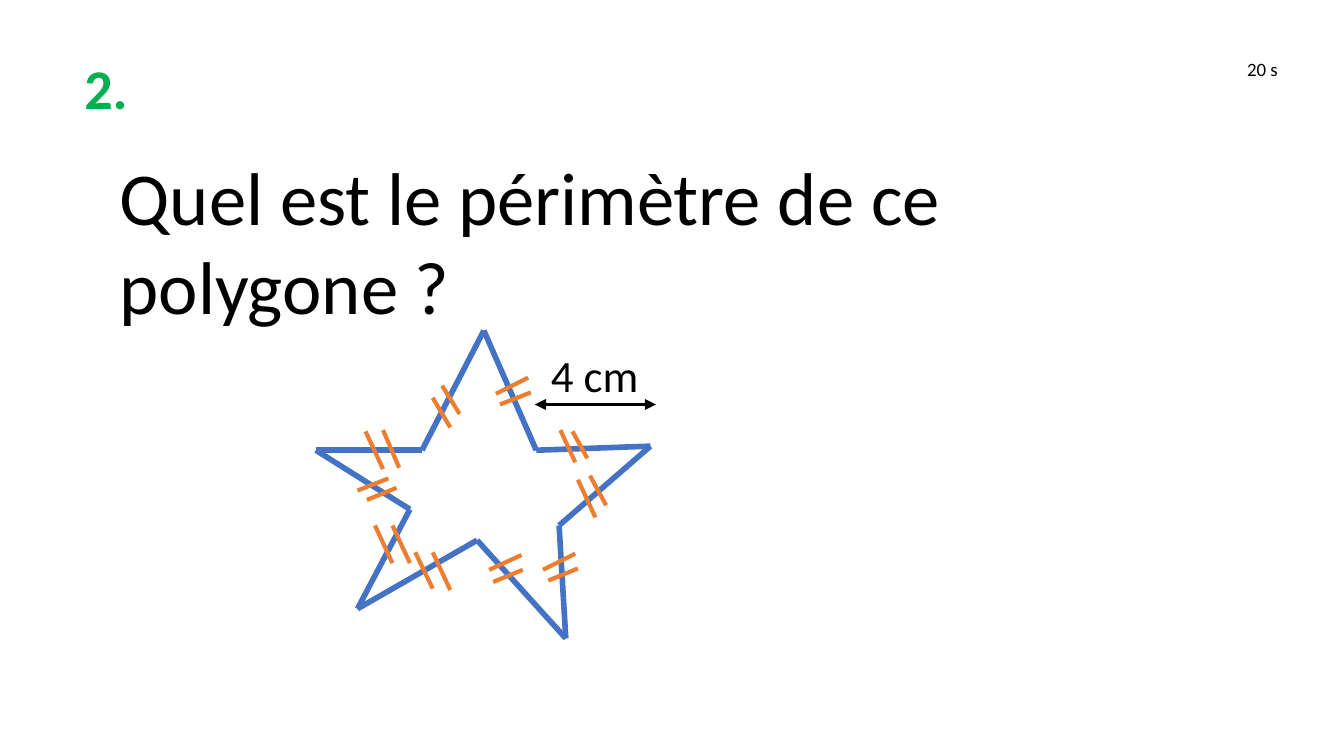
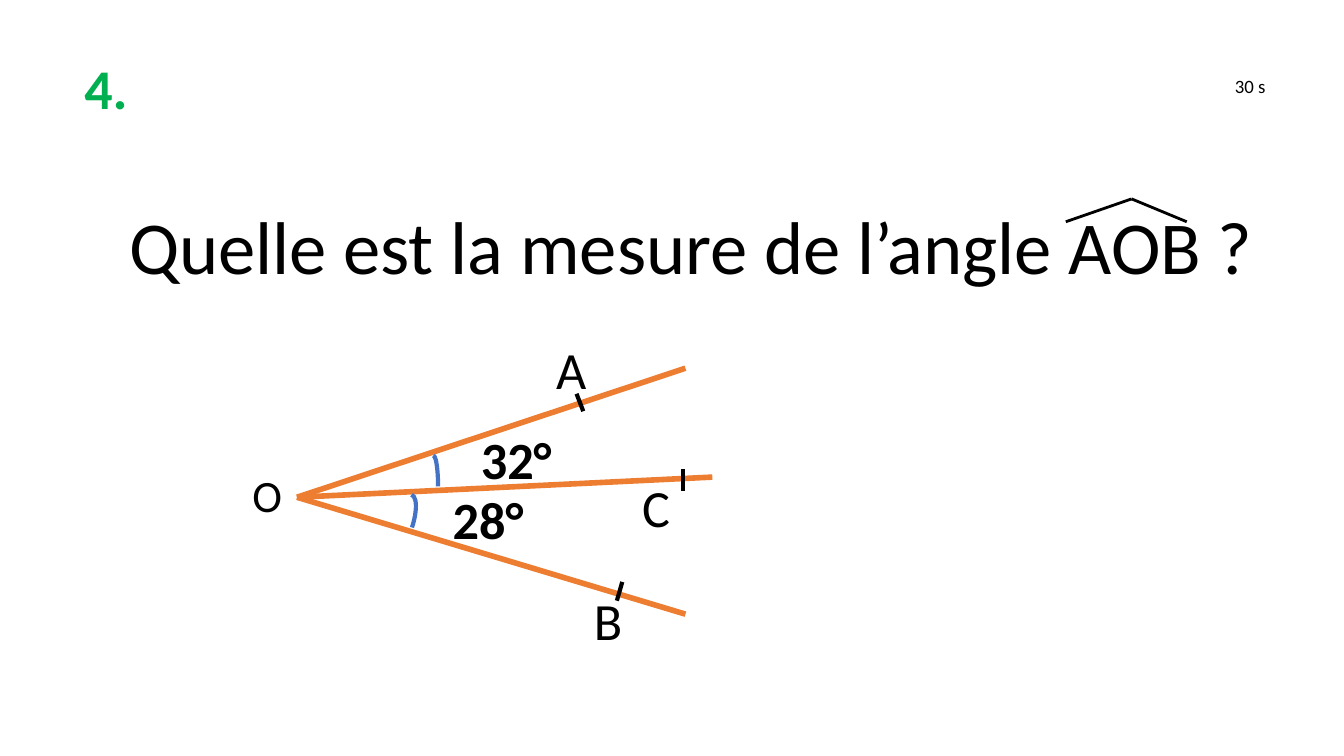
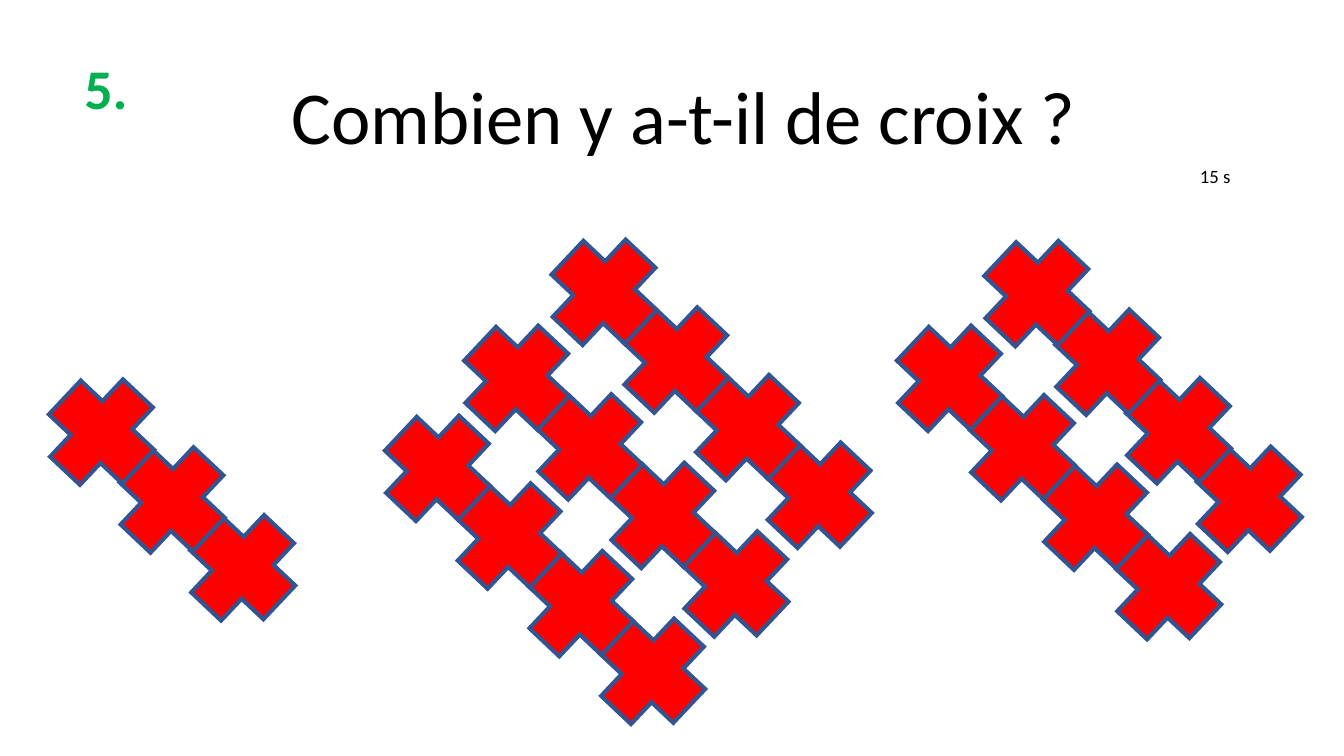
import itertools

import lxml.etree
import pptx
import pptx.dml.color
import pptx.enum.shapes
import pptx.enum.text
import pptx.oxml.ns
import pptx.util

Inches = pptx.util.Inches
Pt = pptx.util.Pt
SHAPES = pptx.enum.shapes.MSO_SHAPE
qn = pptx.oxml.ns.qn


def tint(code):
    return pptx.dml.color.RGBColor.from_string(code)


def write(frame, text, size=28, color="000000", bold=False, wrap=True):
    frame.word_wrap = wrap
    frame.auto_size = pptx.enum.text.MSO_AUTO_SIZE.SHAPE_TO_FIT_TEXT
    frame.vertical_anchor = pptx.enum.text.MSO_ANCHOR.TOP
    para = frame.paragraphs[0]
    para.alignment = pptx.enum.text.PP_ALIGN.LEFT
    run = para.add_run()
    run.text = text
    run.font.name = "Calibri"
    run.font.size = Pt(size)
    run.font.bold = bold
    run.font.color.rgb = tint(color)


class Quiz:
    """Holds the style of the quiz and the slide being built."""

    BLACK = "000000"
    GREEN = "00B050"
    BLUE = "4472C4"
    NAVY = "325491"
    ORANGE = "ED7D31"
    RED = "FF0000"

    def __init__(self):
        self.deck = pptx.Presentation()
        self.deck.slide_width = Inches(10)
        self.deck.slide_height = Inches(10) * 9 // 16
        self.slide = None

    def start(self, number, title, place, time, spot):
        self.slide = self.deck.slides.add_slide(self.deck.slide_layouts[5])
        head = self.slide.shapes.title
        head.left, head.top, head.width = map(Inches, place)
        head.height = Inches(0.77)
        write(head.text_frame, title, size=40)
        self.label(number, 0.53, 0.35, 0.53, 0.61, size=30,
                   color=self.GREEN, bold=True, wrap=False)
        self.label(time, *spot, 0.58, 0.27, size=10.1)

    def label(self, text, left, top, width, height=0.57, **style):
        box = self.slide.shapes.add_textbox(*map(Inches, (left, top, width, height)))
        write(box.text_frame, text, **style)

    def line(self, start, end, color, width=2.25, arrows=False):
        ends = map(Inches, (*start, *end))
        link = self.slide.shapes.add_connector(
            pptx.enum.shapes.MSO_CONNECTOR.STRAIGHT, *ends)
        link.line.color.rgb = tint(color)
        link.line.width = Pt(width)
        props = link.element.spPr
        if arrows:
            for tag in ("a:headEnd", "a:tailEnd"):
                tip = lxml.etree.SubElement(props.find(qn("a:ln")), qn(tag))
                tip.set("type", "triangle")
        lxml.etree.SubElement(props, qn("a:effectLst"))

    def shape(self, kind, left, top, width, height, color, fill=None, turn=0):
        item = self.slide.shapes.add_shape(
            kind, *map(Inches, (left, top, width, height)))
        item.shadow.inherit = False
        item.rotation = turn
        item.line.color.rgb = tint(color)
        item.line.width = Pt(2.25)
        edge = item.element.spPr.find(qn("a:ln"))
        lxml.etree.SubElement(edge, qn("a:miter")).set("lim", "800000")
        if fill:
            item.fill.solid()
            item.fill.fore_color.rgb = tint(fill)
        else:
            item.fill.background()
        return item

    def chain(self, first, last, count):
        for step in reversed(range(count)):
            left, top = (a + (b - a) * step / (count - 1)
                         for a, b in zip(first, last))
            cross = self.shape(SHAPES.CROSS, left, top, 0.75, 0.79,
                               self.NAVY, fill=self.RED, turn=43.3)
            cross.adjustments[0] = 0.297


def draw_star(quiz):
    quiz.start("2.", "Quel est le périmètre de ce polygone ?",
               (0.79, 1.07, 8.87), "20 s", (9.18, 0.38))
    star = [(3.6, 2.46), (3.99, 3.35), (4.84, 3.32), (4.16, 3.91), (4.21, 4.75),
            (3.55, 4.02), (2.66, 4.53), (3.05, 3.79), (2.35, 3.35), (3.14, 3.35)]
    for start, end in itertools.pairwise(star + star[:1]):
        quiz.line(start, end, quiz.BLUE, width=3)
    ticks = [
        (4.17, 3.2, 4.28, 3.44), (4.26, 3.21, 4.37, 3.41),
        (2.72, 3.21, 2.85, 3.49), (2.85, 3.2, 2.97, 3.48),
        (4.3, 3.57, 4.43, 3.85), (4.39, 3.54, 4.51, 3.76),
        (3.09, 4.11, 3.22, 4.38), (3.22, 4.11, 3.35, 4.39),
        (3.22, 2.96, 3.35, 3.18), (3.29, 2.87, 3.42, 3.08),
        (2.79, 3.91, 2.92, 4.19), (2.92, 3.91, 3.05, 4.19),
        (3.93, 2.81, 3.69, 2.93), (3.72, 3.01, 3.95, 2.92),
        (4.28, 4.12, 4.04, 4.24), (4.08, 4.32, 4.3, 4.23),
        (3.88, 4.13, 3.64, 4.24), (3.67, 4.33, 3.89, 4.24),
        (2.73, 3.72, 2.95, 3.63), (2.66, 3.65, 2.89, 3.56),
    ]
    for tick in ticks:
        quiz.line(tick[:2], tick[2:], quiz.ORANGE)
    quiz.line((4.88, 3.01), (3.98, 3.01), quiz.BLACK, width=1.5, arrows=True)
    quiz.label("4 cm", 4, 2.54, 0.88, 0.5, size=24)


def draw_angle(quiz):
    quiz.start("4.", "Quelle est la mesure de l’angle AOB ?",
               (0.86, 1.44, 8.88), "30 s", (9.09, 0.51))
    for end in ((5.1, 2.74), (5.3, 3.55), (5.1, 4.57)):
        quiz.line(end, (2.21, 3.7), quiz.ORANGE, width=3)
    quiz.shape(SHAPES.ARC, 3.19, 3.39, 0.07, 0.46, quiz.BLUE)
    quiz.shape(SHAPES.ARC, 2.91, 3.67, 0.16, 0.46, quiz.BLUE, turn=18.5)
    quiz.label("O", 1.78, 3.43, 0.47, 0.5, size=24)
    for name, left, top, width in (("A", 4.04, 2.46, 0.44),
                                   ("B", 4.32, 4.33, 0.27),
                                   ("C", 4.68, 3.49, 0.45)):
        quiz.label(name, left, top, width)
    for start, end in (((4.29, 2.93), (4.34, 3.06)),
                       ((5.08, 3.65), (5.08, 3.49)),
                       ((4.63, 4.33), (4.59, 4.47))):
        quiz.line(start, end, quiz.BLACK)
    quiz.label("32°", 3.48, 3.13, 0.73, bold=True)
    quiz.label("28°", 3.27, 3.58, 1.08, bold=True)
    for end in ((7.93, 1.65), (8.83, 1.65)):
        quiz.line((8.42, 1.48), end, quiz.BLACK, width=1.5)


def draw_cross(quiz):
    quiz.start("5.", "Combien y a-t-il de croix ?",
               (2.07, 0.47, 6.38), "15 s", (8.83, 1.18))
    for first, last, count in (((7.34, 1.79), (8.92, 3.32), 4),
                               ((6.69, 2.42), (8.32, 3.97), 4),
                               ((4.12, 1.78), (5.72, 3.29), 4),
                               ((3.47, 2.42), (5.1, 3.95), 4),
                               ((2.88, 3.09), (4.48, 4.6), 4),
                               ((0.38, 2.82), (1.43, 3.83), 3)):
        quiz.chain(first, last, count)


def main():
    quiz = Quiz()
    for draw in (draw_star, draw_angle, draw_cross):
        draw(quiz)
    quiz.deck.save("out.pptx")


if __name__ == "__main__":
    main()
